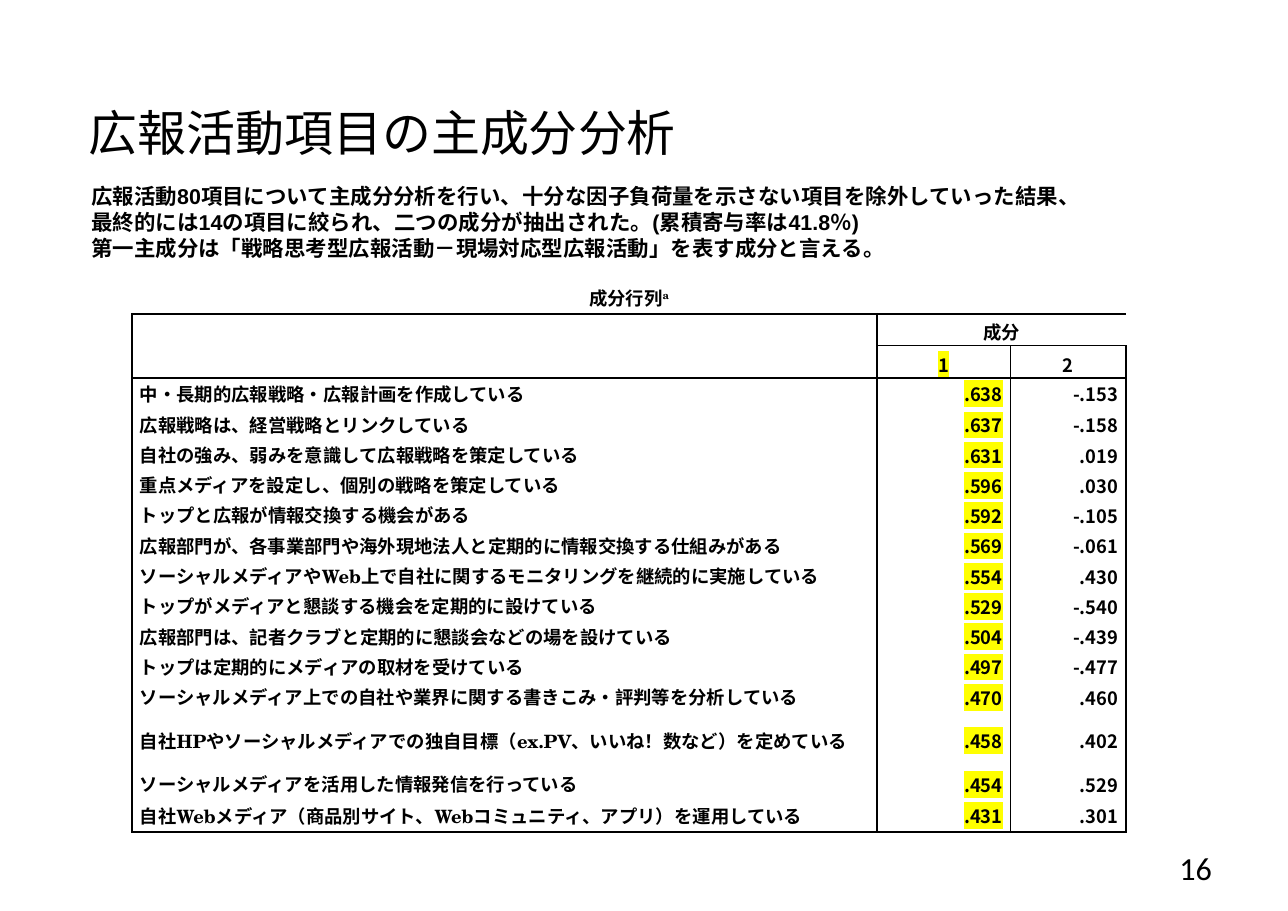
from dataclasses import dataclass
from typing import Any, NamedTuple

from lxml.etree import SubElement
from pptx import Presentation
from pptx.dml.color import RGBColor
from pptx.enum.text import MSO_ANCHOR, MSO_AUTO_SIZE, PP_ALIGN
from pptx.oxml.ns import qn
from pptx.util import Emu, Pt

SCALE = 4572
COLORS = {"ink": "000000", "mark": "FFFF00"}
SERIF, SANS = "TeX Gyre Schola", "Noto Sans CJK JP"


class Box(NamedTuple):
    left: int
    top: int
    width: int
    height: int


class Item(NamedTuple):
    label: str
    first: str
    second: str


@dataclass(frozen=True)
class Style:
    font: str
    size: int
    bold: bool = False
    mark: bool = False
    base: int = 0


LABEL = Style(SERIF, 12, True)
NUMBER = Style(SANS, 12, True)
MARKED = Style(SANS, 12, True, mark=True)
NOTE = Style(SERIF, 12, True, base=30)

LINES = [
    "広報活動80項目について主成分分析を行い、十分な因子負荷量を示さない項目を除外していった結果、",
    "最終的には14の項目に絞られ、二つの成分が抽出された。(累積寄与率は41.8％)",
    "第一主成分は「戦略思考型広報活動－現場対応型広報活動」を表す成分と言える。",
]

ITEMS = [
    Item("中・長期的広報戦略・広報計画を作成している", ".638", "-.153"),
    Item("広報戦略は、経営戦略とリンクしている", ".637", "-.158"),
    Item("自社の強み、弱みを意識して広報戦略を策定している", ".631", ".019"),
    Item("重点メディアを設定し、個別の戦略を策定している", ".596", ".030"),
    Item("トップと広報が情報交換する機会がある", ".592", "-.105"),
    Item("広報部門が、各事業部門や海外現地法人と定期的に情報交換する仕組みがある", ".569", "-.061"),
    Item("ソーシャルメディアやWeb上で自社に関するモニタリングを継続的に実施している", ".554", ".430"),
    Item("トップがメディアと懇談する機会を定期的に設けている", ".529", "-.540"),
    Item("広報部門は、記者クラブと定期的に懇談会などの場を設けている", ".504", "-.439"),
    Item("トップは定期的にメディアの取材を受けている", ".497", "-.477"),
    Item("ソーシャルメディア上での自社や業界に関する書きこみ・評判等を分析している", ".470", ".460"),
    Item("自社HPやソーシャルメディアでの独自目標（ex.PV、いいね！数など）を定めている", ".458", ".402"),
    Item("ソーシャルメディアを活用した情報発信を行っている", ".454", ".529"),
    Item("自社Webメディア（商品別サイト、Webコミュニティ、アプリ）を運用している", ".431", ".301"),
]

COLS = [1352, 242, 210]
ROWS = [58] * 4 + [55] * 10 + [88, 56, 58]
RULES = {1: 1.5, 2: 1, 3: 1.5, len(ROWS): 1.5}
BARS = [1.5, 1.5, 1, 1.5]


def px(value: int) -> Emu:
    return Emu(value * SCALE)


def add_run(para: Any, text: str, style: Style) -> None:
    run = para.add_run()
    run.text = text
    font = run.font
    font.size, font.bold, font.name = Pt(style.size), style.bold, style.font
    font.color.rgb = RGBColor.from_string(COLORS["ink"])
    props = run.font._element
    east = SubElement(props, qn("a:ea"), typeface=style.font)
    props.find(qn("a:latin")).addnext(east)
    if style.base:
        props.set("baseline", str(style.base * 1000))
    if style.mark:
        light = SubElement(props, qn("a:highlight"))
        SubElement(light, qn("a:srgbClr"), val=COLORS["mark"])
        props.find(qn("a:solidFill")).addnext(light)


def set_frame(shape: Any, box: Box, side: int, edge: int, anchor: MSO_ANCHOR) -> Any:
    shape.left, shape.top, shape.width, shape.height = map(px, box)
    frame = shape.text_frame
    frame.word_wrap = True
    frame.auto_size = MSO_AUTO_SIZE.NONE
    frame.vertical_anchor = anchor
    frame.margin_left = frame.margin_right = px(side)
    frame.margin_top = frame.margin_bottom = px(edge)
    return frame


def set_edge(cell: Any, tag: str, width: float) -> None:
    props = cell._tc.get_or_add_tcPr()
    line = SubElement(props, qn(tag), w=str(Pt(width)))
    if width:
        fill = SubElement(line, qn("a:solidFill"))
        SubElement(fill, qn("a:srgbClr"), val=COLORS["ink"])
    else:
        SubElement(line, qn("a:noFill"))


def get_bar(row: int, edge: int) -> float:
    inner = row == 1 and edge == 2
    return 0 if row == 0 or inner else BARS[edge]


def get_rule(edge: int, col: int) -> float:
    inner = edge == 2 and col == 0
    return 0 if inner else RULES.get(edge, 0)


def set_cell(cell: Any, row: int, col: int) -> None:
    set_edge(cell, "a:lnL", get_bar(row, col))
    set_edge(cell, "a:lnR", get_bar(row, col + 1))
    set_edge(cell, "a:lnT", get_rule(row, col))
    set_edge(cell, "a:lnB", get_rule(row + 1, col))
    cell.fill.background()
    cell.margin_left = cell.margin_right = px(14)
    cell.margin_top = cell.margin_bottom = 0
    cell.vertical_anchor = MSO_ANCHOR.BOTTOM if row in (1, 2) else MSO_ANCHOR.MIDDLE


def put_text(cell: Any, text: str, style: Style, align: PP_ALIGN) -> None:
    para = cell.text_frame.paragraphs[0]
    para.alignment = align
    add_run(para, text, style)


def draw_table(slide: Any) -> None:
    box = Box(240, 512, sum(COLS), sum(ROWS))
    table = slide.shapes.add_table(len(ROWS), len(COLS), *map(px, box)).table
    table.first_row = table.horz_banding = False
    for col, width in zip(table.columns, COLS):
        col.width = px(width)
    for row, height in zip(table.rows, ROWS):
        row.height = px(height)
    for row in range(len(ROWS)):
        for col in range(len(COLS)):
            set_cell(table.cell(row, col), row, col)

    table.cell(0, 0).merge(table.cell(0, 2))
    table.cell(1, 0).merge(table.cell(2, 0))
    table.cell(1, 1).merge(table.cell(1, 2))
    put_text(table.cell(0, 0), "成分行列", LABEL, PP_ALIGN.CENTER)
    add_run(table.cell(0, 0).text_frame.paragraphs[0], "a", NOTE)
    put_text(table.cell(1, 1), "成分", LABEL, PP_ALIGN.CENTER)
    put_text(table.cell(2, 1), "1", MARKED, PP_ALIGN.CENTER)
    put_text(table.cell(2, 2), "2", NUMBER, PP_ALIGN.CENTER)
    for row, item in enumerate(ITEMS, 3):
        put_text(table.cell(row, 0), item.label, LABEL, PP_ALIGN.LEFT)
        put_text(table.cell(row, 1), item.first, MARKED, PP_ALIGN.RIGHT)
        put_text(table.cell(row, 2), item.second, NUMBER, PP_ALIGN.RIGHT)
    for cell in table.iter_cells():
        para = cell.text_frame.paragraphs[0]
        if not para.runs:
            SubElement(para._p, qn("a:endParaRPr"), sz="1200")


def main() -> None:
    deck = Presentation()
    deck.slide_width, deck.slide_height = px(2338), px(1654)
    slide = deck.slides.add_slide(deck.slide_layouts[5])

    box = Box(138, 170, 1624, 140)
    frame = set_frame(slide.shapes.title, box, 22, 12, MSO_ANCHOR.MIDDLE)
    para = frame.paragraphs[0]
    para.alignment = PP_ALIGN.LEFT
    add_run(para, "広報活動項目の主成分分析", Style("Calibri", 32))

    box = Box(146, 322, 2032, 162)
    body = slide.shapes.add_textbox(*map(px, box))
    frame = set_frame(body, box, 20, 10, MSO_ANCHOR.TOP)
    for num, text in enumerate(LINES):
        para = frame.add_paragraph() if num else frame.paragraphs[0]
        para.line_spacing = Pt(17)
        add_run(para, text, Style("Arial", 14, True))

    box = Box(1676, 1532, 546, 88)
    page = slide.shapes.add_textbox(*map(px, box))
    para = set_frame(page, box, 22, 12, MSO_ANCHOR.MIDDLE).paragraphs[0]
    para.alignment = PP_ALIGN.RIGHT
    add_run(para, "16", Style("Calibri", 21))

    draw_table(slide)
    deck.save("out.pptx")


if __name__ == "__main__":
    main()
